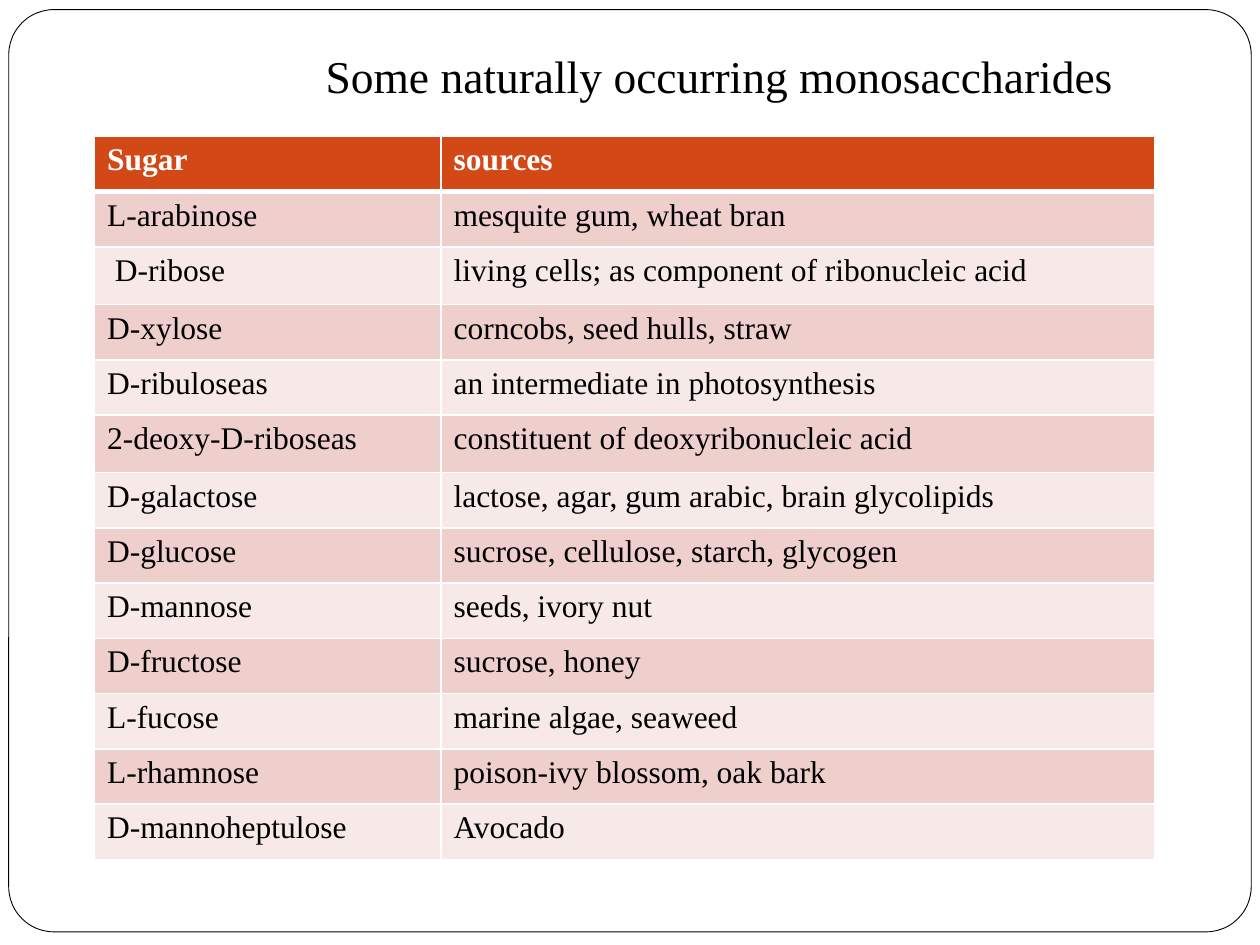
from lxml import etree
from pptx import Presentation
from pptx.dml.color import RGBColor
from pptx.enum import shapes, text
from pptx.oxml import ns
from pptx.util import Pt

FONT = "Times New Roman"
BLACK = RGBColor(0x00, 0x00, 0x00)
WHITE = RGBColor(0xFF, 0xFF, 0xFF)
HEADER = RGBColor(0xD3, 0x48, 0x17)
BANDS = [RGBColor(0xF7, 0xE9, 0xE8), RGBColor(0xEF, 0xCF, 0xCC)]

SUGARS = [
    ("Sugar", "sources"),
    ("L-arabinose", "mesquite gum, wheat bran"),
    ("D-ribose", "living cells; as component of ribonucleic acid"),
    ("D-xylose", "corncobs, seed hulls, straw"),
    ("D-ribuloseas", "an intermediate in photosynthesis"),
    ("2-deoxy-D-riboseas", "constituent of deoxyribonucleic acid"),
    ("D-galactose", "lactose, agar, gum arabic, brain glycolipids"),
    ("D-glucose", "sucrose, cellulose, starch, glycogen"),
    ("D-mannose", "seeds, ivory nut"),
    ("D-fructose", "sucrose, honey"),
    ("L-fucose", "marine algae, seaweed"),
    ("L-rhamnose", "poison-ivy blossom, oak bark"),
    ("D-mannoheptulose", "Avocado"),
]
ROW_HEIGHT, TALL_ROW_HEIGHT = 31.6, 32.9
TALL_ROWS = (2, 5)
INDENTED_ROW = 2


def style_paragraph(p, size, color, bold=False):
    p.alignment = text.PP_ALIGN.LEFT
    p.font.name = FONT
    p.font.size = Pt(size)
    p.font.bold = bold
    p.font.color.rgb = color


def add_frame(s, left, top, width, height):
    """Rounded page border, placed behind everything else."""
    sp = s.shapes.add_shape(shapes.MSO_SHAPE.ROUNDED_RECTANGLE,
                            Pt(left), Pt(top), Pt(width), Pt(height))
    sp.adjustments[0] = 0.049
    sp.shadow.inherit = False
    sp.fill.solid()
    sp.fill.fore_color.rgb = WHITE
    sp.line.color.rgb = BLACK
    sp.line.width = Pt(0.5)
    s.shapes._spTree.insert(2, sp._element)


def place_title(s, left, top, width, height, indent):
    title = s.shapes.title
    title.left, title.top = Pt(left), Pt(top)
    title.width, title.height = Pt(width), Pt(height)
    tf = title.text_frame
    tf.text = "Some naturally occurring monosaccharides"
    tf.word_wrap = True
    tf.auto_size = text.MSO_AUTO_SIZE.NONE
    tf.vertical_anchor = text.MSO_ANCHOR.TOP
    tf.margin_left = Pt(indent)
    style_paragraph(tf.paragraphs[0], 26, BLACK)


def set_borders(cell, **widths):
    """White cell borders; widths in points, in the order L, R, T, B."""
    for side, width in widths.items():
        ln = etree.SubElement(cell._tc.get_or_add_tcPr(),
                              ns.qn(f"a:ln{side}"), w=str(Pt(width)))
        fill = etree.SubElement(ln, ns.qn("a:solidFill"))
        etree.SubElement(fill, ns.qn("a:srgbClr"), val=str(WHITE))


def add_sugar_table(s, left, top, col_widths):
    heights = [TALL_ROW_HEIGHT if i in TALL_ROWS else ROW_HEIGHT
               for i in range(len(SUGARS))]
    table = s.shapes.add_table(len(SUGARS), len(col_widths), Pt(left), Pt(top),
                               Pt(sum(col_widths)), Pt(sum(heights))).table
    for col, width in zip(table.columns, col_widths):
        col.width = Pt(width)
    for i, (row, words) in enumerate(zip(table.rows, SUGARS)):
        row.height = Pt(heights[i])
        is_header = i == 0
        for cell, word in zip(row.cells, words):
            cell.text = word
            style_paragraph(cell.text_frame.paragraphs[0], 18,
                            WHITE if is_header else BLACK, is_header)
            set_borders(cell, L=1, R=1, T=3 if i == 1 else 1,
                        B=3 if is_header else 1)
            cell.fill.solid()
            cell.fill.fore_color.rgb = HEADER if is_header else BANDS[i % 2]
    table.cell(INDENTED_ROW, 0).margin_left = Pt(11.7)


def main():
    prs = Presentation()
    prs.slide_width, prs.slide_height = Pt(720), Pt(540)
    s = prs.slides.add_slide(prs.slide_layouts[5])
    add_frame(s, 5, 5.5, 710, 527)
    place_title(s, 36, 24, 648, 45, indent=150)
    add_sugar_table(s, 54, 78, (198, 408))
    prs.save("out.pptx")


if __name__ == "__main__":
    main()
